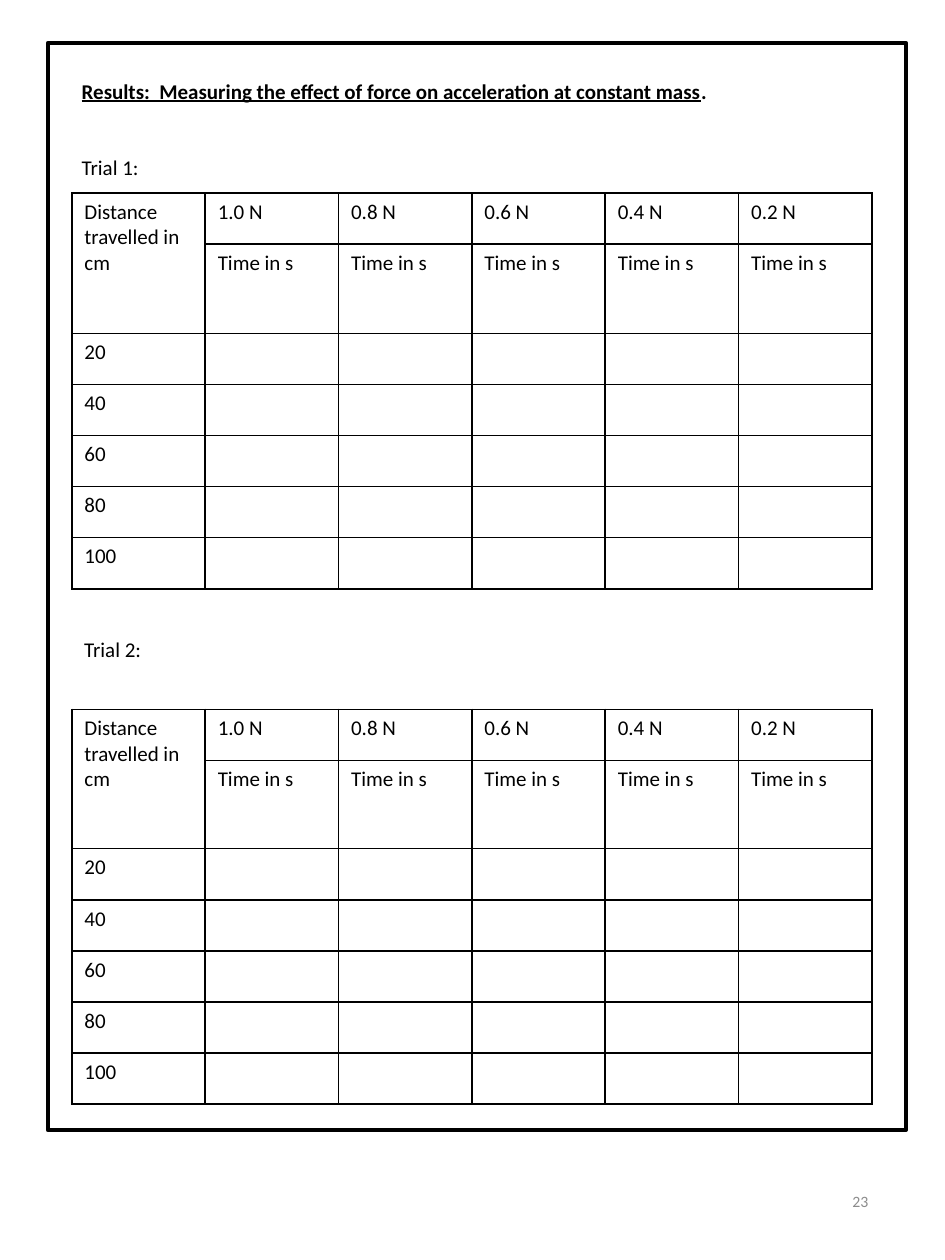
from lxml import etree
from pptx import Presentation
from pptx.dml.color import RGBColor
from pptx.enum.shapes import MSO_SHAPE
from pptx.enum.text import MSO_ANCHOR, PP_ALIGN
from pptx.oxml.ns import qn
from pptx.util import Inches, Pt

BLACK = RGBColor(0, 0, 0)
GRAY = RGBColor(0x8C, 0x8C, 0x8C)

FORCES = ["1.0 N", "0.8 N", "0.6 N", "0.4 N", "0.2 N"]
DISTANCES = ["20", "40", "60", "80", "100"]
ROWS = [
    ["Distance travelled in cm"] + FORCES,
    [""] + ["Time in s"] * len(FORCES),
] + [[d] + [""] * len(FORCES) for d in DISTANCES]


class Worksheet:
    font = "Calibri"
    size = 12

    def __init__(self, slide):
        self.s = slide

    def style(self, p, size=None, color=BLACK):
        p.font.name = self.font
        p.font.size = Pt(size or self.size)
        p.font.color.rgb = color

    def text(self, x, y, w, h, paragraphs, size=None, color=BLACK,
             align=PP_ALIGN.LEFT, anchor=MSO_ANCHOR.TOP):
        sp = self.s.shapes.add_textbox(Inches(x), Inches(y), Inches(w), Inches(h))
        tf = sp.text_frame
        tf.word_wrap = True
        tf.vertical_anchor = anchor
        for i, content in enumerate(paragraphs):
            p = tf.add_paragraph() if i else tf.paragraphs[0]
            p.text = content
            p.alignment = align
            self.style(p, size, color)
        return tf

    def borders(self, cell):
        tcPr = cell._tc.get_or_add_tcPr()
        for i, side in enumerate(("a:lnL", "a:lnR", "a:lnT", "a:lnB")):
            ln = etree.Element(qn(side), w=str(Pt(1)))
            fill = etree.SubElement(ln, qn("a:solidFill"))
            etree.SubElement(fill, qn("a:srgbClr"), val=str(BLACK))
            tcPr.insert(i, ln)

    def table(self, x, y, w, h, rows):
        tbl = self.s.shapes.add_table(
            len(rows), len(rows[0]), Inches(x), Inches(y), Inches(w), Inches(h)).table
        tbl.first_row = tbl.horz_banding = False
        for r, row in enumerate(rows):
            for c, content in enumerate(row):
                cell = tbl.cell(r, c)
                cell.text = content
                cell.fill.background()
                self.style(cell.text_frame.paragraphs[0])
                self.borders(cell)
        tbl.cell(0, 0).merge(tbl.cell(1, 0))

    def frame(self, x, y, w, h):
        sp = self.s.shapes.add_shape(
            MSO_SHAPE.RECTANGLE, Inches(x), Inches(y), Inches(w), Inches(h))
        sp.shadow.inherit = False
        sp.fill.background()
        sp.line.color.rgb = BLACK
        sp.line.width = Pt(2.25)


def main():
    prs = Presentation()
    prs.slide_width, prs.slide_height = Inches(7.5), Inches(10)
    sheet = Worksheet(prs.slides.add_slide(prs.slide_layouts[6]))

    # Trial 1 table
    sheet.table(0.57, 1.53, 6.35, 2.84, ROWS)

    # Heading and first trial label
    tf = sheet.text(0.55, 0.57, 6.48, 0.91, [
        "Results:  Measuring the effect of force on acceleration at constant mass",
        "Trial 1:"])
    heading, label = tf.paragraphs
    heading.font.bold = True
    heading.runs[0].font.underline = True
    r = heading.add_run()
    r.text = "."
    r.font.underline = False
    label.space_before = Pt(29.3)

    # Trial 2 label and table
    sheet.text(0.57, 5, 1.09, 0.3, ["Trial 2:"])
    sheet.table(0.57, 5.63, 6.35, 2.84, ROWS)

    # Page frame and number
    sheet.frame(0.38, 0.34, 6.81, 8.63)
    sheet.text(5.3, 9.27, 1.69, 0.53, ["23"], size=9, color=GRAY,
               align=PP_ALIGN.RIGHT, anchor=MSO_ANCHOR.MIDDLE)

    prs.save("out.pptx")


if __name__ == "__main__":
    main()
